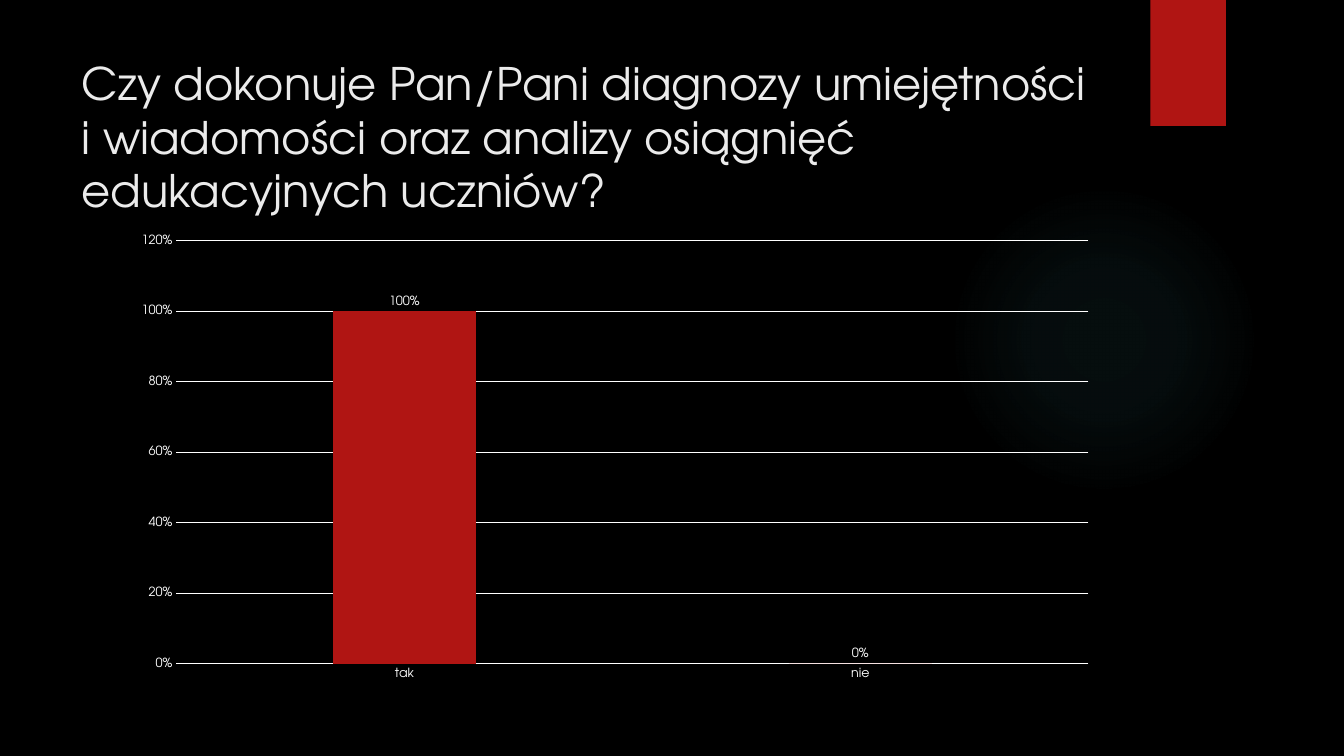
from lxml.etree import SubElement
from pptx import Presentation
from pptx.chart.data import CategoryChartData
from pptx.dml.color import RGBColor
from pptx.enum.chart import XL_CHART_TYPE as ChartType, XL_LABEL_POSITION as LabelPosition, XL_TICK_MARK as TickMark
from pptx.enum.shapes import MSO_SHAPE as Shape
from pptx.enum.text import MSO_ANCHOR as Anchor, PP_ALIGN as Align
from pptx.oxml import parse_xml
from pptx.oxml.ns import nsdecls, qn
from pptx.util import Inches, Pt

BLACK = RGBColor(0x00, 0x00, 0x00)
WHITE = RGBColor(0xFF, 0xFF, 0xFF)
TITLE_GREY = RGBColor(0xEB, 0xEB, 0xEB)
RED = RGBColor(0xB0, 0x15, 0x13)
GLOW_TEAL = RGBColor(0x50, 0xB9, 0xC1)
FONT = "TeX Gyre Adventor"


def set_font(font, size, color):
    for name, value in {"name": FONT, "size": Pt(size), "bold": False}.items():
        setattr(font, name, value)
    font.color.rgb = color


def add_plain(kind, *place):
    shape = page.shapes.add_shape(kind, *map(Inches, place))
    shape.shadow.inherit = False
    shape.line.fill.background()
    return shape


deck = Presentation()
deck.slide_width, deck.slide_height = Inches(13.33), Inches(7.5)
page = deck.slides.add_slide(deck.slide_layouts[5])
page.background.fill.solid()
page.background.fill.fore_color.rgb = BLACK

# Soft round glow, fading outwards
glow = add_plain(Shape.OVAL, 9.41, 1.83, 3.08, 3.08)
stops = "".join(
    f'<a:gs pos="{pos * 1000}"><a:srgbClr val="{GLOW_TEAL}"><a:alpha val="{alpha * 1000}"/></a:srgbClr></a:gs>'
    for pos, alpha in ((0, 7), (36, 6), (69, 0)))
glow_fill = parse_xml(
    f'<a:gradFill {nsdecls("a")} rotWithShape="1"><a:gsLst>{stops}</a:gsLst><a:path path="circle">'
    '<a:fillToRect l="50000" t="50000" r="50000" b="50000"/></a:path></a:gradFill>')
glow._element.spPr.find(qn("a:prstGeom")).addnext(glow_fill)

# Red ribbon at the top edge, with a soft shadow below
ribbon = add_plain(Shape.RECTANGLE, 11.41, 0, 0.75, 1.25)
ribbon.fill.solid()
ribbon.fill.fore_color.rgb = RED
shadow = SubElement(ribbon._element.spPr.find(qn("a:effectLst")), qn("a:outerShdw"),
                    blurRad=str(Pt(3)), dist=str(Pt(2)), dir="5400000", rotWithShape="0")
shade = SubElement(shadow, qn("a:srgbClr"), val=str(BLACK))
SubElement(shade, qn("a:alpha"), val="45000")

# Title
title = page.shapes.title
title.left, title.top, title.width, title.height = map(Inches, (0.71, 0.5, 10.29, 1.53))
frame = title.text_frame
frame.word_wrap = True
frame.vertical_anchor = Anchor.TOP
para = frame.paragraphs[0]
para.alignment = Align.LEFT
span = para.add_run()
span.text = "Czy dokonuje Pan/Pani diagnozy umiejętności i wiadomości oraz analizy osiągnięć edukacyjnych uczniów?"
set_font(span.font, 32, TITLE_GREY)

# Column chart of the answers
answers = CategoryChartData(number_format="0%")
answers.categories = ["tak", "nie"]
answers.add_series("Series 1", (1, 0))
chart = page.shapes.add_chart(ChartType.COLUMN_CLUSTERED,
                              *map(Inches, (1.21, 2.24, 9.78, 4.59)), answers).chart
chart.has_legend = chart.has_title = False
set_font(chart.font, 10, WHITE)

plot = chart.plots[0]
for name, value in {"gap_width": 219, "overlap": -27, "vary_by_categories": False,
                    "has_data_labels": True}.items():
    setattr(plot, name, value)
bars = plot.series[0].format.fill
bars.solid()
bars.fore_color.rgb = RED

labels = plot.data_labels
for name, value in {"show_value": True, "number_format": "0%", "number_format_is_linked": False,
                    "position": LabelPosition.OUTSIDE_END}.items():
    setattr(labels, name, value)
set_font(labels.font, 9, WHITE)

# Axes and gridlines
for axis in (chart.category_axis, chart.value_axis):
    axis.major_tick_mark = axis.minor_tick_mark = TickMark.NONE
    set_font(axis.tick_labels.font, 9, WHITE)
value_axis = chart.value_axis
value_axis.minimum_scale, value_axis.maximum_scale, value_axis.major_unit = 0, 1.2, 0.2
value_axis.tick_labels.number_format = "0%"
value_axis.tick_labels.number_format_is_linked = False
value_axis.format.line.fill.background()
for line in (chart.category_axis.format.line, value_axis.major_gridlines.format.line):
    line.color.rgb = WHITE
    line.width = Pt(0.75)

deck.save("out.pptx")
